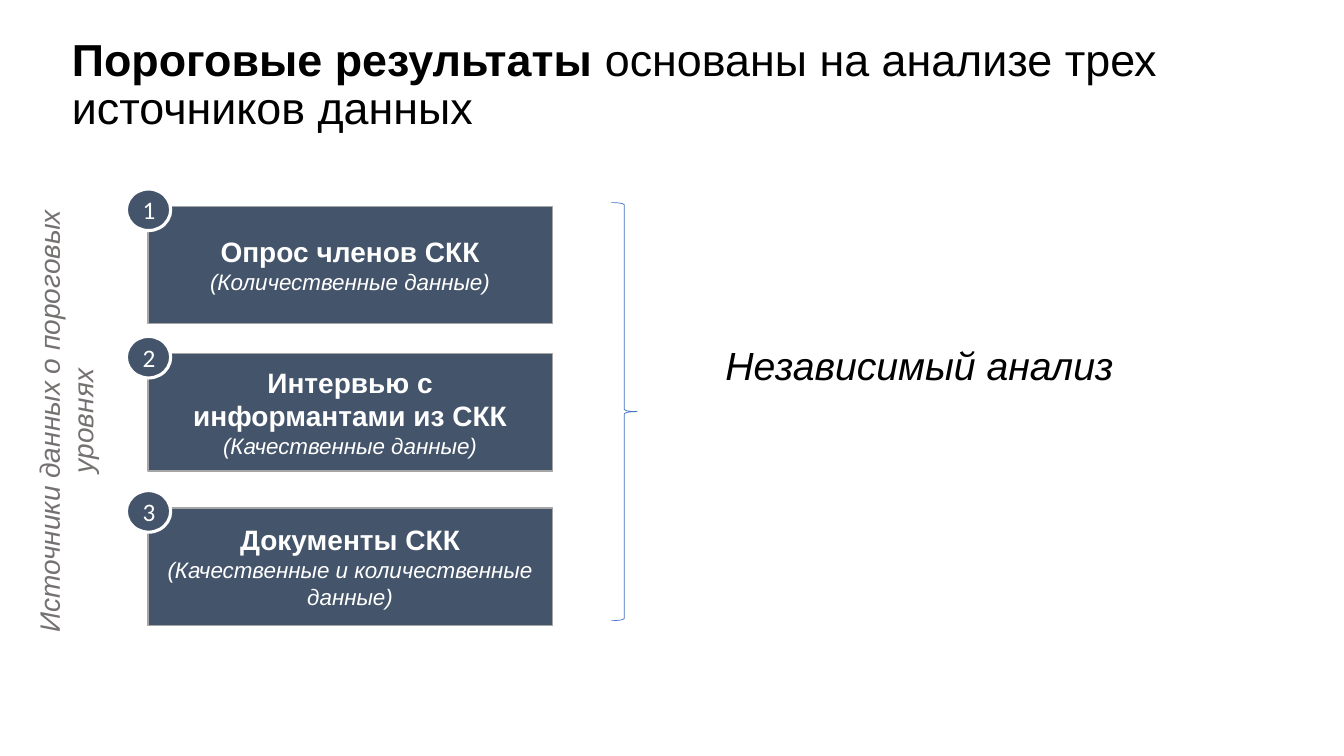
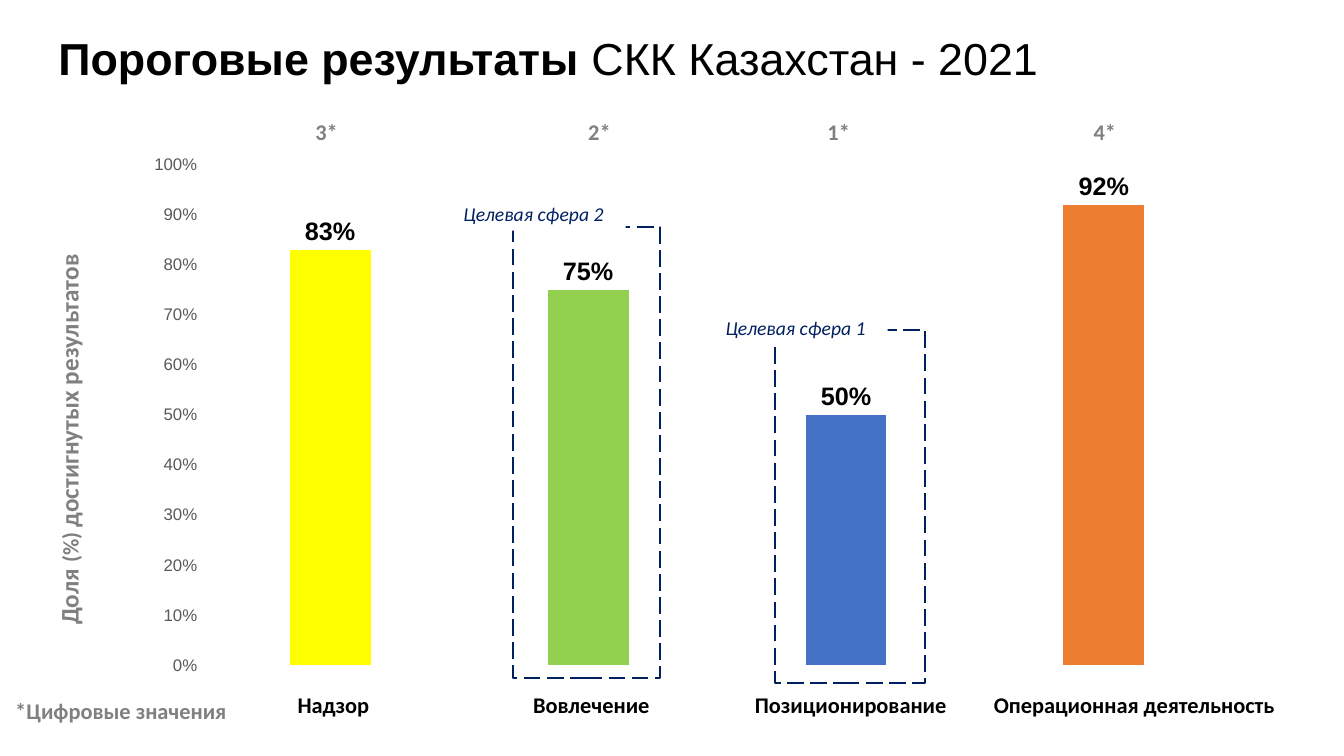
"""Build two slides on threshold results: data sources and a column chart."""
from dataclasses import dataclass, replace

from pptx import Presentation
from pptx.chart.data import CategoryChartData
from pptx.dml.color import RGBColor
from pptx.enum.chart import XL_CHART_TYPE as CHART, XL_LABEL_POSITION as LABEL_POS
from pptx.enum.chart import XL_TICK_MARK as TICK
from pptx.enum.dml import MSO_LINE_DASH_STYLE as DASH
from pptx.enum.shapes import MSO_AUTO_SHAPE_TYPE as SHAPE
from pptx.enum.text import MSO_ANCHOR as ANCHOR, MSO_AUTO_SIZE as AUTOSIZE, PP_ALIGN as ALIGN
from pptx.oxml import parse_xml
from pptx.oxml.ns import nsdecls, qn
from pptx.util import Inches, Pt

WIDTH, HEIGHT = Inches(13.33), Inches(7.5)


@dataclass(frozen=True)
class Style:
    size: float
    color: str
    font: str = "Arial"
    bold: bool = False
    italic: bool = False


@dataclass(frozen=True)
class Theme:
    slate: str = "44546A"
    white: str = "FFFFFF"
    border: str = "A5A5A5"
    blue: str = "4472C4"
    navy: str = "002060"
    title: Style = Style(32, "000000")
    source: Style = Style(20, "FFFFFF", bold=True)
    detail: Style = Style(16, "FFFFFF", italic=True)
    badge: Style = Style(18, "FFFFFF", "Calibri")
    side: Style = Style(20, "767171", italic=True)
    result: Style = Style(28, "000000", italic=True)
    axis_title: Style = Style(18, "808080", "Calibri", bold=True)
    note: Style = Style(16, "808080", "Calibri", bold=True)
    name: Style = Style(16, "000000", "Calibri", bold=True)
    target: Style = Style(14, "002060", "Calibri", italic=True)
    tick: Style = Style(12, "595959")
    value: Style = Style(18, "000000", bold=True)


THEME = Theme()
SOURCES = [
    (27.3, "Опрос членов СКК", "(Количественные данные)"),
    (46.8, "Интервью с информантами из СКК", "(Качественные данные)"),
    (67.2, "Документы СКК", "(Качественные и количественные данные)"),
]
AREAS = [
    ("Надзор", 0.83, "FFFF00", "3*", 24.3, 24.8, 8),
    ("Вовлечение", 0.75, "92D050", "2*", 44.6, 44, 11),
    ("Позиционирование", 0.5, "4472C4", "1*", 62.4, 63.3, 17),
    ("Операционная деятельность", 0.92, "ED7D31", "4*", 82.2, 84.4, 23.8),
]
TARGETS = [
    ("Целевая сфера 1", (57.7, 43.6, 11.1, 46.7), 41.1),
    ("Целевая сфера 2", (38.2, 30, 10.9, 59.7), 26),
]


def share(x, y, w, h):
    """Turn percentages of the slide into lengths."""
    return tuple(int(side * part / 100) for side, part in
                 ((WIDTH, x), (HEIGHT, y), (WIDTH, w), (HEIGHT, h)))


def rgb(color):
    """Return a colour object for a hex string."""
    return RGBColor.from_string(color)


def set_font(font, style):
    """Apply a text style to a font."""
    font.name, font.size = style.font, Pt(style.size)
    font.bold, font.italic = style.bold, style.italic
    font.color.rgb = rgb(style.color)


def write(tf, *lines, align=ALIGN.CENTER, anchor=ANCHOR.MIDDLE):
    """Fill a text frame with lines, each a list of (text, style) runs."""
    tf.word_wrap, tf.auto_size, tf.vertical_anchor = True, AUTOSIZE.NONE, anchor
    for i, runs in enumerate(lines):
        p = tf.add_paragraph() if i else tf.paragraphs[0]
        p.alignment = align
        for text, style in runs:
            r = p.add_run()
            r.text = text
            set_font(r.font, style)


def add_title(prs, area, strong, rest):
    """Add a slide with a title that starts in bold."""
    s = prs.slides.add_slide(prs.slide_layouts[5])
    sp = s.shapes.title
    sp.left, sp.top, sp.width, sp.height = share(*area)
    bold = replace(THEME.title, bold=True)
    write(sp.text_frame, [(strong + " ", bold), (rest, THEME.title)], align=ALIGN.LEFT)
    sp.text_frame.paragraphs[0].line_spacing = 0.9
    return s


def add_shape(s, kind, area, fill=None, line=None, width=1):
    """Add a preset shape with an optional fill and outline."""
    sp = s.shapes.add_shape(kind, *share(*area))
    sp.shadow.inherit = False
    if fill:
        sp.fill.solid()
        sp.fill.fore_color.rgb = rgb(fill)
    else:
        sp.fill.background()
    if line:
        sp.line.color.rgb = rgb(line)
        sp.line.width = Pt(width)
    else:
        sp.line.fill.background()
    return sp


def add_label(s, area, text, style):
    """Add a centred caption on a white ground."""
    sp = add_shape(s, SHAPE.RECTANGLE, area, THEME.white)
    write(sp.text_frame, [(text, style)])


def add_text(s, area, *runs, vertical=False):
    """Add a one-line text box, optionally reading upwards."""
    tf = s.shapes.add_textbox(*share(*area)).text_frame
    write(tf, runs, anchor=ANCHOR.TOP if vertical else ANCHOR.MIDDLE)
    if vertical:
        tf._txBody.bodyPr.set("vert", "vert270")


def add_source(s, number, top, name, detail):
    """Add a source box with a numbered badge on its corner."""
    sp = add_shape(s, SHAPE.RECTANGLE, (11, top, 30.1, 15.5), THEME.slate, THEME.border)
    write(sp.text_frame, [(name, THEME.source)], [(detail, THEME.detail)])
    badge = add_shape(s, SHAPE.OVAL, (9.4, top - 2.3, 3.3, 5.5),
                      THEME.slate, THEME.white, 2.25)
    write(badge.text_frame, [(str(number), THEME.badge)])


def add_target(s, name, frame, label_top):
    """Add a dashed frame with its caption over the top left corner."""
    sp = add_shape(s, SHAPE.RECTANGLE, frame, line=THEME.navy, width=1.5)
    sp.line.dash_style = DASH.LONG_DASH
    add_label(s, (frame[0] - 5.35, label_top, 13.7, 4.5), name, THEME.target)


def set_plot_layout(chart, x, y, w, h):
    """Fix the inner plot area as shares of the chart."""
    area = chart._chartSpace.chart.plotArea
    for old in area.findall(qn("c:layout")):
        area.remove(old)
    sizes = "".join(f'<c:{tag} val="{val}"/>' for tag, val in
                    (("x", x), ("y", y), ("w", w), ("h", h)))
    area.insert(0, parse_xml(
        f'<c:layout {nsdecls("c")}><c:manualLayout><c:layoutTarget val="inner"/>'
        f'<c:xMode val="edge"/><c:yMode val="edge"/>{sizes}</c:manualLayout></c:layout>'))


def add_columns(s, area):
    """Add the column chart of the achieved shares."""
    data = CategoryChartData(number_format="0%")
    data.categories = [str(i) for i in range(1, len(AREAS) + 1)]
    data.add_series("Series 1", [row[1] for row in AREAS])
    chart = s.shapes.add_chart(CHART.COLUMN_CLUSTERED, *share(*area), data).chart
    chart.has_legend = chart.has_title = False
    set_font(chart.font, replace(THEME.value, size=10, bold=False))
    set_plot_layout(chart, 0.07, 0.04, 0.915, 0.919)
    chart.category_axis.visible = False
    axis = chart.value_axis
    axis.minimum_scale, axis.maximum_scale, axis.major_unit = 0, 1, 0.1
    axis.has_major_gridlines = False
    axis.major_tick_mark = axis.minor_tick_mark = TICK.NONE
    axis.format.line.fill.background()
    axis.tick_labels.number_format = "0%"
    axis.tick_labels.number_format_is_linked = False
    set_font(axis.tick_labels.font, THEME.tick)
    plot = chart.plots[0]
    plot.gap_width, plot.overlap, plot.vary_by_categories = 219, -27, False
    plot.has_data_labels = True
    labels = plot.data_labels
    labels.show_value, labels.position = True, LABEL_POS.OUTSIDE_END
    labels.number_format, labels.number_format_is_linked = "0%", False
    set_font(labels.font, THEME.value)
    for i, row in enumerate(AREAS):
        fill = plot.series[0].points[i].format.fill
        fill.solid()
        fill.fore_color.rgb = rgb(row[2])


def build_sources(prs):
    """Build the slide with the three data sources."""
    s = add_title(prs, (4.6, 1.7, 93.5, 19.3), "Пороговые результаты",
                  "основаны на анализе трех источников данных")
    for number, source in enumerate(SOURCES, 1):
        add_source(s, number, *source)
    add_shape(s, SHAPE.RIGHT_BRACE, (45.5, 26.8, 1.9, 55.3), line=THEME.blue, width=0.5)
    add_text(s, (2, 25.3, 5.8, 60.8),
             ("Источники данных о пороговых уровнях", THEME.side), vertical=True)
    add_text(s, (42, 44.3, 52.8, 8), ("Независимый анализ", THEME.result))


def build_results(prs):
    """Build the slide with the chart of results."""
    s = add_title(prs, (3.6, 1.2, 95.9, 13.6), "Пороговые результаты",
                  "СКК Казахстан - 2021")
    add_text(s, (3.6, 31.5, 3.8, 53.3), ("Доля ", THEME.axis_title), ("(%)", THEME.note),
             (" достигнутых результатов", THEME.axis_title), vertical=True)
    add_label(s, (0, 91.6, 18, 4.9), "*Цифровые значения", THEME.note)
    add_columns(s, (9.1, 18.9, 83.9, 72.1))
    for name, _, _, rank, rank_mid, name_mid, width in AREAS:
        add_label(s, (rank_mid - 4, 15.3, 8, 4.3), rank, THEME.note)
        add_label(s, (name_mid - width / 2, 91.1, width, 4.3), name, THEME.name)
    for target in TARGETS:
        add_target(s, *target)


def main():
    """Build and save the presentation."""
    prs = Presentation()
    prs.slide_width, prs.slide_height = WIDTH, HEIGHT
    build_sources(prs)
    build_results(prs)
    prs.save("out.pptx")


if __name__ == "__main__":
    main()
